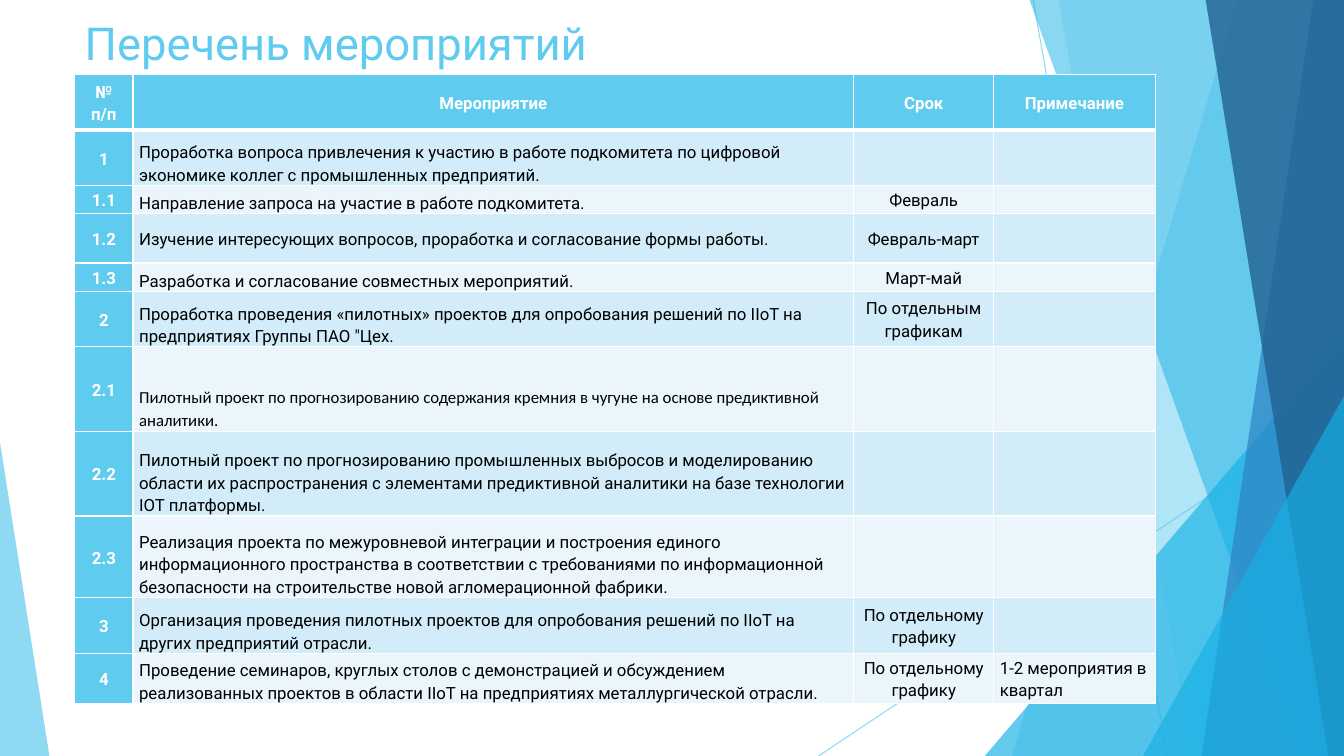
from lxml import etree
from pptx import Presentation
from pptx.dml.color import RGBColor
from pptx.enum.shapes import MSO_CONNECTOR, MSO_SHAPE
from pptx.enum.text import MSO_ANCHOR as Anchor, PP_ALIGN as Align
from pptx.oxml.ns import qn
from pptx.util import Pt

WHITE = RGBColor(0xFF, 0xFF, 0xFF)
BLACK = RGBColor(0x00, 0x00, 0x00)
SKY = RGBColor(0x5F, 0xCB, 0xEF)
CYAN = RGBColor(0x17, 0xB0, 0xE4)
BLUE = RGBColor(0x2E, 0x83, 0xC3)
NAVY = RGBColor(0x22, 0x62, 0x92)
BANDS = (RGBColor(0xD2, 0xEC, 0xF9), RGBColor(0xEA, 0xF6, 0xFC))

WIDTH, HEIGHT = 960, 540
COLUMNS = (41.76, 514.8, 100.08, 115.2)
HEADER = ("№ п/п", "Мероприятие", "Срок", "Примечание")
HEADER_HEIGHT = 39.6
ACTIVITIES = (
    (39.6, "1", "Проработка вопроса привлечения к участию в работе подкомитета "
     "по цифровой экономике коллег с промышленных предприятий.", "", ""),
    (20.16, "1.1", "Направление запроса на участие в работе подкомитета.", "Февраль", ""),
    (35.28, "1.2", "Изучение интересующих вопросов, проработка и согласование "
     "формы работы.", "Февраль-март", ""),
    (20.16, "1.3", "Разработка и согласование совместных мероприятий.", "Март-май", ""),
    (39.6, "2", "Проработка проведения «пилотных» проектов для опробования решений "
     "по IIoT на предприятиях Группы ПАО \"Цех.", "По отдельным графикам", ""),
    (60.48, "2.1", "Пилотный проект по прогнозированию содержания кремния в чугуне "
     "на основе предиктивной аналитики.", "", ""),
    (60.48, "2.2", "Пилотный проект по прогнозированию промышленных выбросов и "
     "моделированию области их распространения с элементами предиктивной аналитики "
     "на базе технологии IOT платформы.", "", ""),
    (58.32, "2.3", "Реализация проекта по межуровневой интеграции и построения единого "
     "информационного пространства в соответствии с требованиями по информационной "
     "безопасности на строительстве новой агломерационной фабрики.", "", ""),
    (39.6, "3", "Организация проведения пилотных проектов для опробования решений "
     "по IIoT на других предприятий отрасли.", "По отдельному графику", ""),
    (36, "4", "Проведение семинаров, круглых столов с демонстрацией и обсуждением "
     "реализованных проектов в области IIoT на предприятиях металлургической отрасли.",
     "По отдельному графику", "1-2 мероприятия в квартал"),
)


def set_opacity(fill_parent, percent):
    color = fill_parent.find(f".//{qn('a:srgbClr')}")
    etree.SubElement(color, qn("a:alpha"), val=str(percent * 1000))


def add_border(cell, side, width):
    line = etree.SubElement(cell._tc.get_or_add_tcPr(), qn(f"a:ln{side}"), w=str(Pt(width)))
    fill = etree.SubElement(line, qn("a:solidFill"))
    etree.SubElement(fill, qn("a:srgbClr"), val=str(WHITE))


class SlideBuilder:
    font = "Roboto"
    text_size = 12
    title_size = 32.4

    def __init__(self, page):
        self.page = page

    def line(self, start, end):
        connector = self.page.shapes.add_connector(
            MSO_CONNECTOR.STRAIGHT, *map(Pt, (*start, *end)))
        connector.line.color.rgb = SKY
        connector.line.width = Pt(0.75)
        properties = connector.line._get_or_add_ln()
        set_opacity(properties, 70)
        etree.SubElement(properties.getparent(), qn("a:effectLst"))

    def paint(self, shape, color, opacity):
        shape.shadow.inherit = False
        shape.line.fill.background()
        shape.fill.solid()
        shape.fill.fore_color.rgb = color
        set_opacity(shape._element.spPr, opacity)

    def ribbon(self, top_left, bottom_left, color, opacity):
        """Fill the page from a slanted left edge to its right side."""
        top = -0.72
        builder = self.page.shapes.build_freeform(Pt(top_left), Pt(top))
        corners = ((WIDTH, top), (WIDTH, HEIGHT), (bottom_left, HEIGHT))
        builder.add_line_segments([(Pt(x), Pt(y)) for x, y in corners], close=True)
        self.paint(builder.convert_to_shape(), color, opacity)

    def triangle(self, left, top, width, apex, color, opacity):
        """Stand a triangle on the bottom edge of the page."""
        shape = self.page.shapes.add_shape(
            MSO_SHAPE.ISOSCELES_TRIANGLE, *map(Pt, (left, top, width, HEIGHT - top)))
        shape.adjustments[0] = apex
        self.paint(shape, color, opacity)

    def style(self, para, size, color, bold=False, font=None):
        para.font.name = font or self.font
        para.font.size = Pt(size)
        para.font.bold = bold
        para.font.color.rgb = color

    def title(self, text, left, top, width, height):
        box = self.page.shapes.title
        box.left, box.top, box.width, box.height = map(Pt, (left, top, width, height))
        box.text_frame.text = text
        box.text_frame.vertical_anchor = Anchor.BOTTOM
        para = box.text_frame.paragraphs[0]
        para.alignment = Align.LEFT
        self.style(para, self.title_size, SKY)

    def cell(self, cell, text, fill, color, bold=False, align=Align.CENTER,
             anchor=Anchor.MIDDLE, font=None, top=1, bottom=1):
        for side, width in (("L", 1), ("R", 1), ("T", top), ("B", bottom)):
            add_border(cell, side, width)
        cell.fill.solid()
        cell.fill.fore_color.rgb = fill
        cell.margin_left = cell.margin_right = Pt(4.32)
        cell.margin_top = cell.margin_bottom = 0
        cell.vertical_anchor = anchor
        cell.text = text
        para = cell.text_frame.paragraphs[0]
        para.alignment = align
        para.line_spacing = 1.15
        self.style(para, self.text_size, color, bold, font)
        if not text:
            etree.SubElement(para._p, qn("a:endParaRPr"), sz=str(self.text_size * 100))

    def plan(self, left, top):
        heights = [HEADER_HEIGHT] + [activity[0] for activity in ACTIVITIES]
        table = self.page.shapes.add_table(
            len(heights), len(COLUMNS),
            *map(Pt, (left, top, sum(COLUMNS), sum(heights)))).table
        for column, width in zip(table.columns, COLUMNS):
            column.width = Pt(width)
        for row, height in zip(table.rows, heights):
            row.height = Pt(height)
        for index, name in enumerate(HEADER):
            self.cell(table.cell(0, index), name, SKY, WHITE, bold=True, bottom=3)
        for index, (_, number, activity, term, remark) in enumerate(ACTIVITIES, 1):
            number_cell, activity_cell, term_cell, remark_cell = table.rows[index].cells
            band = BANDS[(index - 1) % 2]
            top_border = 3 if index == 1 else 1
            self.cell(number_cell, number, SKY, WHITE, bold=True, top=top_border)
            self.cell(activity_cell, activity, band, BLACK, align=Align.LEFT,
                      anchor=Anchor.MIDDLE if number == "1.2" else Anchor.BOTTOM,
                      font="Calibri" if number == "2.1" else None, top=top_border)
            self.cell(term_cell, term, band, BLACK, top=top_border)
            self.cell(remark_cell, remark, band, BLACK, align=Align.LEFT, top=top_border)


def main():
    deck = Presentation()
    deck.slide_width, deck.slide_height = Pt(WIDTH), Pt(HEIGHT)
    builder = SlideBuilder(deck.slides.add_slide(deck.slide_layouts[5]))

    builder.line((738, 0), (833.76, HEIGHT))
    builder.line((WIDTH, 290.16), (584.64, HEIGHT))
    builder.ribbon(884.16, 722.88, SKY, 36)
    builder.ribbon(756, 851.76, SKY, 20)
    builder.triangle(703.44, 239.76, 256.56, 1, CYAN, 66)
    builder.ribbon(735.12, 929.52, CYAN, 50)
    builder.ribbon(938.16, 858.24, BLUE, 70)
    builder.ribbon(861.12, 948.96, NAVY, 80)
    builder.triangle(816.48, 282.96, 143.52, 1, CYAN, 66)
    builder.triangle(0, 316.08, 35.28, 0, SKY, 70)

    builder.title("Перечень мероприятий", 53.28, 5.04, 676.8, 48.24)
    builder.plan(53.28, 53.28)
    deck.save("out.pptx")


if __name__ == "__main__":
    main()
